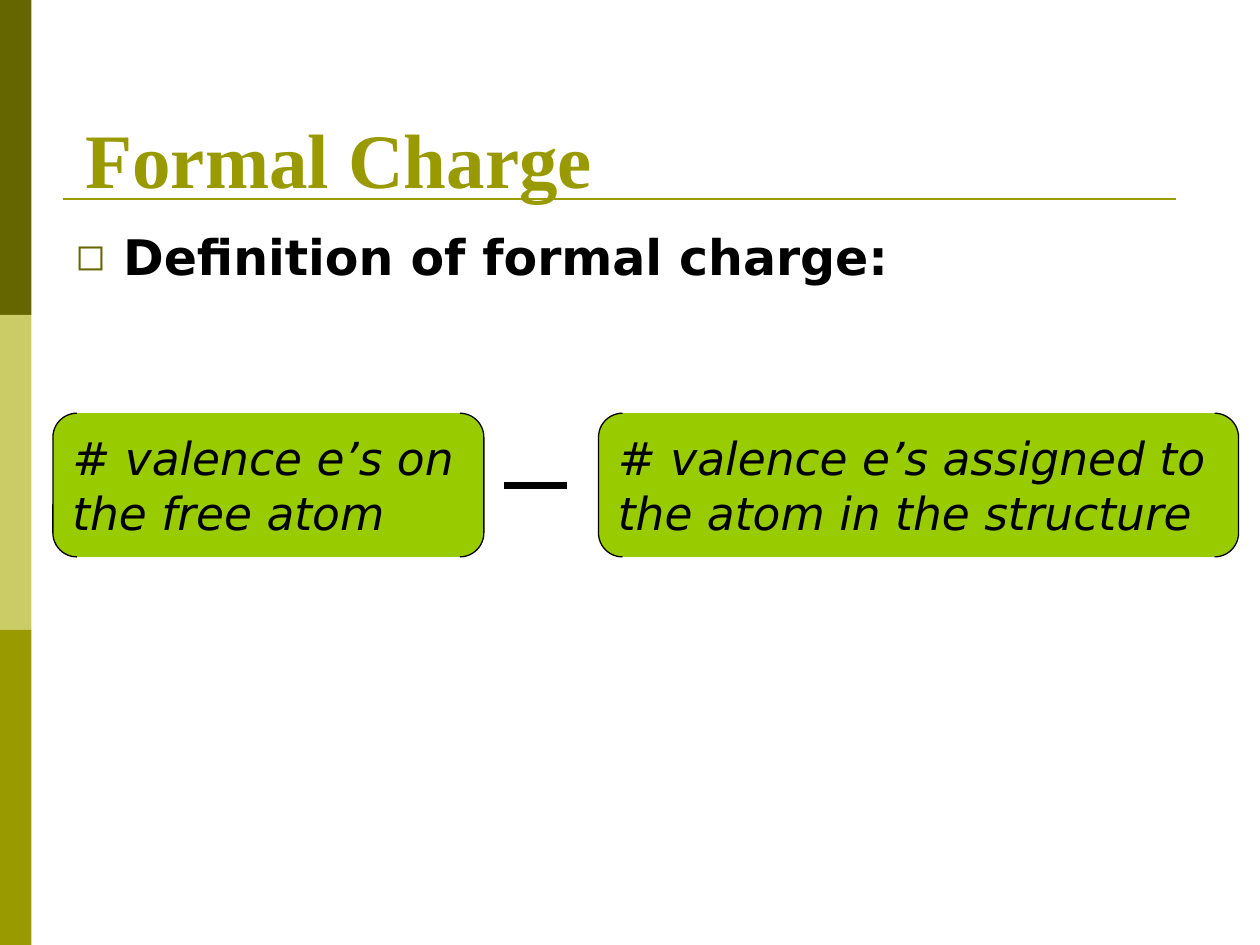
from lxml import etree
from pptx import Presentation
from pptx.dml.color import RGBColor
from pptx.enum.shapes import MSO_CONNECTOR, MSO_SHAPE
from pptx.enum.text import MSO_ANCHOR, PP_ALIGN
from pptx.oxml.ns import qn
from pptx.util import Inches, Pt

RECT = MSO_SHAPE.RECTANGLE
BRACKETS = MSO_SHAPE.DOUBLE_BRACKET
STRAIGHT = MSO_CONNECTOR.STRAIGHT
TOP, MIDDLE, BOTTOM = MSO_ANCHOR.TOP, MSO_ANCHOR.MIDDLE, MSO_ANCHOR.BOTTOM
LEFT = PP_ALIGN.LEFT

COLORS = {
    "dark olive": "666600",
    "pale olive": "CCCC66",
    "olive": "999900",
    "green": "99CC00",
    "black": "000000",
}
TITLE_FONT = "Times New Roman"
BODY_FONT = "DejaVu Sans"


class SlideBuilder:
    def __init__(self, slide):
        self.shapes = slide.shapes

    def color(self, name):
        return RGBColor.from_string(COLORS[name])

    def shape(self, kind, x, y, w, h, fill):
        s = self.shapes.add_shape(kind, Inches(x), Inches(y), Inches(w), Inches(h))
        s.shadow.inherit = False
        s.fill.solid()
        s.fill.fore_color.rgb = self.color(fill)
        s.line.fill.background()
        return s

    def line(self, x1, x2, y, color, width):
        s = self.shapes.add_connector(STRAIGHT, Inches(x1), Inches(y), Inches(x2), Inches(y))
        s.line.color.rgb = self.color(color)
        s.line.width = Pt(width)
        etree.SubElement(s._element.spPr, qn("a:effectLst"))

    def fill_text(self, s, text, size, anchor, font=BODY_FONT, color="black", bold=False, italic=False):
        tf = s.text_frame
        tf.word_wrap = True
        tf.vertical_anchor = anchor
        tf.text = text
        p = tf.paragraphs[0]
        p.alignment = LEFT
        f = p.runs[0].font
        f.name, f.size, f.bold, f.italic = font, Pt(size), bold, italic
        f.color.rgb = self.color(color)
        return p

    def text(self, x, y, w, h, text, size, anchor, **style):
        s = self.shapes.add_textbox(Inches(x), Inches(y), Inches(w), Inches(h))
        return self.fill_text(s, text, size, anchor, **style)

    def bullet(self, p, char, color, percent, indent):
        pPr = p._p.get_or_add_pPr()
        pPr.set("marL", str(Inches(indent)))
        pPr.set("indent", str(-Inches(indent)))
        clr = etree.SubElement(pPr, qn("a:buClr"))
        etree.SubElement(clr, qn("a:srgbClr"), val=COLORS[color])
        etree.SubElement(pPr, qn("a:buSzPct"), val=str(percent * 1000))
        etree.SubElement(pPr, qn("a:buFont"), typeface=BODY_FONT)
        etree.SubElement(pPr, qn("a:buChar"), char=char)

    def bracket_box(self, x, w, text):
        s = self.shape(BRACKETS, x, 3.28, w, 1.14, "green")
        s.adjustments[0] = 0.167
        s.line.color.rgb = self.color("black")
        s.line.width = Pt(0.75)
        self.fill_text(s, text, 26, MIDDLE, italic=True)


def main():
    prs = Presentation()
    prs.slide_width, prs.slide_height = Inches(10), Inches(7.5)
    b = SlideBuilder(prs.slides.add_slide(prs.slide_layouts[6]))

    # Side band and rule under the title
    for i, fill in enumerate(("dark olive", "pale olive", "olive")):
        b.shape(RECT, 0, 2.5 * i, 0.25, 2.5, fill)
    b.line(0.5, 9.33, 1.58, "olive", 1.5)

    # Title and definition
    b.text(0.58, 0.42, 9, 1.25, "Formal Charge", 44, BOTTOM,
           font=TITLE_FONT, color="olive", bold=True)
    p = b.text(0.5, 1.75, 9, 4.95, "Definition of formal charge:", 28, TOP, bold=True)
    p.space_before = Pt(2)
    b.bullet(p, "◻", "dark olive", 75, 0.38)

    # Formula: free-atom electrons minus assigned electrons
    b.bracket_box(0.42, 3.42, "# valence e’s on the free atom")
    b.line(4, 4.5, 3.85, "black", 4)
    b.bracket_box(4.75, 5.08, "# valence e’s assigned to the atom in the structure")

    prs.save("out.pptx")


if __name__ == "__main__":
    main()
